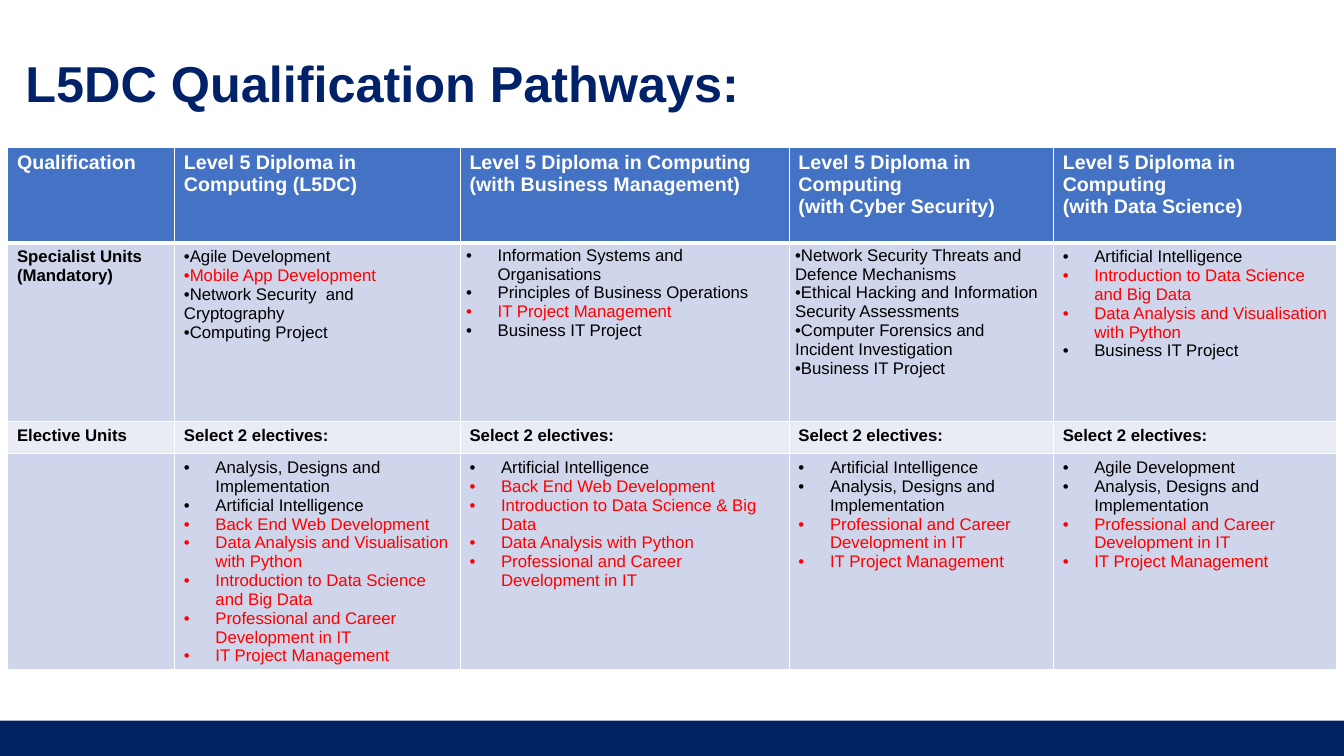
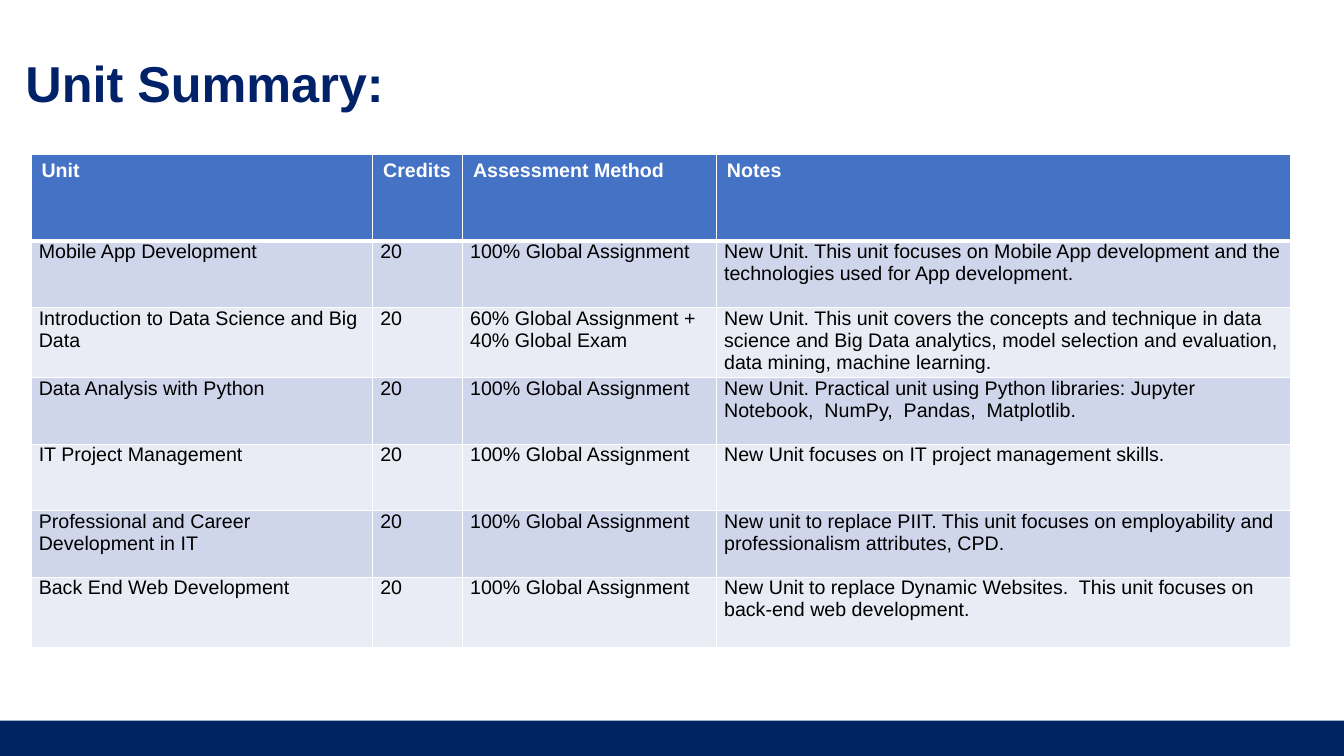
"""Build the qualification pathways and unit summary slides."""
from dataclasses import dataclass
from functools import partial

from lxml.etree import SubElement
from pptx import Presentation
from pptx.dml.color import RGBColor
from pptx.enum.shapes import MSO_SHAPE
from pptx.enum.text import MSO_ANCHOR, MSO_AUTO_SIZE, PP_ALIGN
from pptx.oxml.ns import qn
from pptx.presentation import Presentation as Deck
from pptx.slide import Slide
from pptx.table import Table, _Cell
from pptx.text.text import Font, _Paragraph
from pptx.util import Pt


@dataclass(frozen=True)
class Theme:
    """Hold the colours, typeface and type sizes shared by the slides."""

    face: str = "Arial"
    title: str = "012169"
    band: str = "002463"
    header: str = "4472C4"
    odd_row: str = "CFD5EA"
    even_row: str = "E9EBF5"
    white: str = "FFFFFF"
    ink: str = "000000"
    highlight: str = "FF0000"
    title_size: float = 36
    large: float = 14
    small: float = 12
    rule: float = 1
    header_rule: float = 3


THEME = Theme()
WIDTH, HEIGHT = 960, 540
BAND_TOP = 514.8
HANGING = 22.5


@dataclass(frozen=True)
class Line:
    """Describe one paragraph of a cell."""

    text: str
    color: str = THEME.ink
    bold: bool = False
    size: float = THEME.small
    bulleted: bool = False
    hanging: float = 0


@dataclass(frozen=True)
class Entry:
    """Describe the lines and the margins of one cell."""

    lines: tuple[Line, ...]
    inset_x: float = 6.6
    inset_y: float = 3.3


@dataclass(frozen=True)
class Grid:
    """Describe the place, measures and entries of one table."""

    left: float
    top: float
    columns: tuple[float, ...]
    heights: tuple[float, ...]
    rows: list[list[Entry]]


Unit = partial(Line, bulleted=True, hanging=HANGING)
NewUnit = partial(Unit, color=THEME.highlight)
FlushUnit = partial(Unit, hanging=0)
Heading = partial(Line, color=THEME.white, bold=True, size=THEME.large)
Label = partial(Line, bold=True)


def entry(*lines: Line) -> Entry:
    """Gather lines into an entry with regular margins."""
    return Entry(lines)


def tight(*lines: Line) -> Entry:
    """Gather lines into an entry with narrow margins."""
    return Entry(lines, 4.2, 2.1)


CAREER = "Professional and Career Development in IT"
BACK_END = "Back End Web Development"
PROJECT = "IT Project Management"
MOBILE = "Mobile App Development"
BIG_DATA = "Introduction to Data Science and Big Data"
PYTHON = "Data Analysis with Python"
VISUALISATION = "Data Analysis and Visualisation with Python"
AI = "Artificial Intelligence"
AGILE = "Agile Development"
BUSINESS = "Business IT Project"
ANALYSIS = "Analysis, Designs and Implementation"
SHARED_NEW = (NewUnit(CAREER), NewUnit(PROJECT))

PATHWAYS = Grid(
    5.6, 105, (119.2, 204, 235, 188.8, 202.2), (68.6, 127.6, 23, 154.4),
    [
        [
            entry(Heading("Qualification")),
            entry(Heading("Level 5 Diploma in Computing (L5DC)")),
            *(
                entry(Heading("Level 5 Diploma in Computing"), Heading(f"(with {field})"))
                for field in ("Business Management", "Cyber Security", "Data Science")
            ),
        ],
        [
            entry(Label("Specialist Units"), Label("(Mandatory)")),
            entry(
                FlushUnit(AGILE),
                FlushUnit(MOBILE, color=THEME.highlight),
                FlushUnit("Network Security  and Cryptography"),
                FlushUnit("Computing Project"),
            ),
            tight(
                Unit("Information Systems and Organisations"),
                Unit("Principles of Business Operations"),
                NewUnit(PROJECT),
                Unit(BUSINESS),
            ),
            tight(
                FlushUnit("Network Security Threats and Defence Mechanisms"),
                FlushUnit("Ethical Hacking and Information Security Assessments"),
                FlushUnit("Computer Forensics and Incident Investigation"),
                FlushUnit(BUSINESS),
            ),
            entry(Unit(AI), NewUnit(BIG_DATA), NewUnit(VISUALISATION), Unit(BUSINESS)),
        ],
        [entry(Label("Elective Units")), *[entry(Label("Select 2 electives:"))] * 4],
        [
            entry(),
            entry(
                Unit("Analysis, Designs and Implementation"),
                Unit(AI),
                NewUnit(BACK_END),
                NewUnit(VISUALISATION),
                NewUnit(BIG_DATA),
                *SHARED_NEW,
            ),
            entry(
                Unit(AI),
                NewUnit(BACK_END),
                NewUnit("Introduction to Data Science & Big Data"),
                NewUnit(PYTHON),
                NewUnit(CAREER),
            ),
            entry(Unit(AI), Unit(ANALYSIS), *SHARED_NEW),
            entry(Unit(AGILE), Unit(ANALYSIS), *SHARED_NEW),
        ],
    ],
)

GLOBAL = "100% Global Assignment"
SUMMARY_TEXT = [
    (MOBILE, GLOBAL, "New Unit. This unit focuses on Mobile App development and the "
     "technologies used for App development."),
    (BIG_DATA, "60% Global Assignment + 40% Global Exam",
     "New Unit. This unit covers the concepts and technique in data science and Big Data "
     "analytics, model selection and evaluation, data mining, machine learning."),
    (PYTHON, GLOBAL, "New Unit. Practical unit using Python libraries: Jupyter Notebook,  "
     "NumPy,  Pandas,  Matplotlib."),
    (PROJECT, GLOBAL, "New Unit focuses on IT project management skills."),
    (CAREER, GLOBAL, "New unit to replace PIIT. This unit focuses on employability and "
     "professionalism attributes, CPD."),
    (BACK_END, GLOBAL, "New Unit to replace Dynamic Websites.  This unit focuses on "
     "back-end web development."),
]

SUMMARY = Grid(
    22.1, 110.6, (244, 64.2, 181.4, 410.4), (61.6, 47.6, 50, 47.5, 47.5, 47.5, 50.2),
    [
        [
            Entry((Heading(name),), 7.6, 3.8)
            for name in ("Unit", "Credits", "Assessment Method", "Notes")
        ],
        *(
            [
                Entry((Line(text, size=THEME.large),), 5.6, 0)
                for text in (unit, "20", method, notes)
            ]
            for unit, method, notes in SUMMARY_TEXT
        ),
    ],
)


def set_font(font: Font, size: float, color: str, bold: bool) -> None:
    """Apply the shared typeface with a size, colour and weight."""
    font.name = THEME.face
    font.size = Pt(size)
    font.bold = bold
    font.color.rgb = RGBColor.from_string(color)


def add_bullet(paragraph: _Paragraph, hanging: float) -> None:
    """Give a paragraph a round bullet and a hanging indent."""
    properties = paragraph._p.get_or_add_pPr()
    properties.set("marL", str(Pt(hanging)))
    properties.set("indent", str(-Pt(hanging)))
    SubElement(properties, qn("a:buFont"), typeface=THEME.face)
    SubElement(properties, qn("a:buChar"), char="•")


def add_borders(cell: _Cell, top: float, bottom: float) -> None:
    """Draw white rules around a cell."""
    properties = cell._tc.get_or_add_tcPr()
    widths = {"L": THEME.rule, "R": THEME.rule, "T": top, "B": bottom}
    for side, width in widths.items():
        border = SubElement(properties, qn(f"a:ln{side}"), w=str(Pt(width)))
        fill = SubElement(border, qn("a:solidFill"))
        SubElement(fill, qn("a:srgbClr"), val=THEME.white)


def fill_cell(cell: _Cell, content: Entry, color: str) -> None:
    """Write an entry into a cell over a solid colour."""
    cell.fill.solid()
    cell.fill.fore_color.rgb = RGBColor.from_string(color)
    cell.margin_left = cell.margin_right = Pt(content.inset_x)
    cell.margin_top = cell.margin_bottom = Pt(content.inset_y)
    frame = cell.text_frame
    for index, line in enumerate(content.lines):
        paragraph = frame.add_paragraph() if index else frame.paragraphs[0]
        paragraph.text = line.text
        if line.bulleted:
            add_bullet(paragraph, line.hanging)
        set_font(paragraph.font, line.size, line.color, line.bold)


def row_color(index: int) -> str:
    """Return the header colour or the alternating body colour."""
    if index == 0:
        return THEME.header
    return THEME.odd_row if index % 2 else THEME.even_row


def add_grid(slide: Slide, grid: Grid) -> None:
    """Add a table to a slide."""
    table: Table = slide.shapes.add_table(
        len(grid.heights), len(grid.columns), Pt(grid.left), Pt(grid.top),
        Pt(sum(grid.columns)), Pt(sum(grid.heights)),
    ).table
    for column, width in zip(table.columns, grid.columns):
        column.width = Pt(width)
    for index, (row, height, entries) in enumerate(zip(table.rows, grid.heights, grid.rows)):
        row.height = Pt(height)
        top = THEME.header_rule if index == 1 else THEME.rule
        bottom = THEME.header_rule if index == 0 else THEME.rule
        for cell, content in zip(row.cells, entries):
            add_borders(cell, top, bottom)
            fill_cell(cell, content, row_color(index))


def add_titled_slide(deck: Deck, heading: str) -> Slide:
    """Add a slide with the shared title style and bottom band."""
    slide = deck.slides.add_slide(deck.slide_layouts[5])
    band = slide.shapes.add_shape(
        MSO_SHAPE.RECTANGLE, 0, Pt(BAND_TOP), Pt(WIDTH), Pt(HEIGHT - BAND_TOP)
    )
    band.shadow.inherit = False
    band.fill.solid()
    band.fill.fore_color.rgb = RGBColor.from_string(THEME.band)
    band.line.fill.background()
    title = slide.shapes.title
    title.left, title.top, title.width, title.height = Pt(11), Pt(33), Pt(818), Pt(51)
    frame = title.text_frame
    frame.text = heading
    frame.auto_size = MSO_AUTO_SIZE.NONE
    frame.vertical_anchor = MSO_ANCHOR.BOTTOM
    paragraph = frame.paragraphs[0]
    paragraph.alignment = PP_ALIGN.LEFT
    set_font(paragraph.font, THEME.title_size, THEME.title, True)
    return slide


def main() -> None:
    """Build and save the deck."""
    deck = Presentation()
    deck.slide_width, deck.slide_height = Pt(WIDTH), Pt(HEIGHT)
    add_grid(add_titled_slide(deck, "L5DC Qualification Pathways:"), PATHWAYS)
    add_grid(add_titled_slide(deck, "Unit Summary:"), SUMMARY)
    deck.save("out.pptx")


if __name__ == "__main__":
    main()
